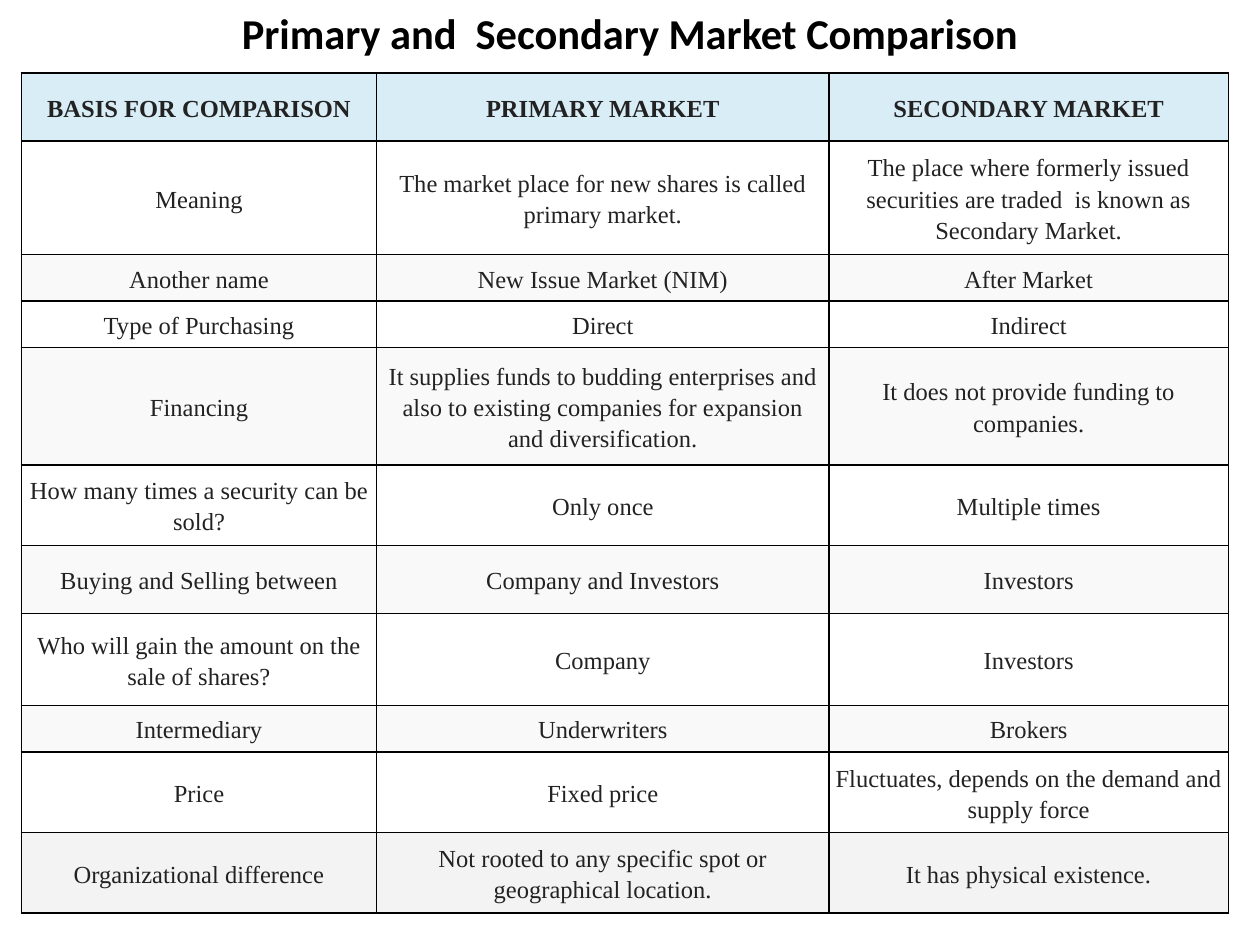
from pptx import Presentation
from pptx import util as u
from pptx.dml.color import RGBColor
from pptx.enum import text
from pptx.oxml import parse_xml
from pptx.oxml.ns import nsdecls

COLORS = {
    "title": "000000",
    "body": "222222",
    "border": "000000",
    "header": "D9EDF7",
    "plain": "FFFFFF",
    "band": "F9F9F9",
    "last": "F3F3F3",
}

COL_WIDTHS = [2.82, 3.59, 3.17]
ROW_HEIGHTS = [0.54, 0.9, 0.37, 0.37, 0.93, 0.64, 0.54, 0.73, 0.37, 0.64, 0.64]
ROWS = [
    ("BASIS FOR COMPARISON", "PRIMARY MARKET", "SECONDARY MARKET"),
    ("Meaning",
     "The market place for new shares is called primary market.",
     "The place where formerly issued securities are traded  is known as Secondary Market."),
    ("Another name", "New Issue Market (NIM)", "After Market"),
    ("Type of Purchasing", "Direct", "Indirect"),
    ("Financing",
     "It supplies funds to budding enterprises and also to existing companies "
     "for expansion and diversification.",
     "It does not provide funding to companies."),
    ("How many times a security can be sold?", "Only once", "Multiple times"),
    ("Buying and Selling between", "Company and Investors", "Investors"),
    ("Who will gain the amount on the sale of shares?", "Company", "Investors"),
    ("Intermediary", "Underwriters", "Brokers"),
    ("Price", "Fixed price", "Fluctuates, depends on the demand and supply force"),
    ("Organizational difference",
     "Not rooted to any specific spot or geographical location.",
     "It has physical existence."),
]


class Deck:
    title_font = "Calibri"
    body_font = "Times New Roman"

    def __init__(self, prs):
        self.s = prs.slides.add_slide(prs.slide_layouts[5])

    def font(self, p, name, size, color, bold):
        for r in p.runs:
            r.font.name = name
            r.font.size = u.Pt(size)
            r.font.bold = bold
            r.font.color.rgb = RGBColor.from_string(COLORS[color])

    def title(self, words, x, y, w, h):
        sp = self.s.shapes.title
        sp.left, sp.top, sp.width, sp.height = map(u.Inches, (x, y, w, h))
        tf = sp.text_frame
        tf.text = words
        tf.word_wrap = True
        tf.auto_size = text.MSO_AUTO_SIZE.NONE
        tf.vertical_anchor = text.MSO_ANCHOR.MIDDLE
        tf.margin_top, tf.margin_bottom = u.Inches(0.05), u.Inches(0.28)
        p = tf.paragraphs[0]
        p.alignment = text.PP_ALIGN.CENTER
        self.font(p, self.title_font, 24.3, "title", True)

    def borders(self, cell):
        tcPr = cell._tc.get_or_add_tcPr()
        for i, side in enumerate(("lnL", "lnR", "lnT", "lnB")):
            tcPr.insert(i, parse_xml(
                f'<a:{side} {nsdecls("a")} w="{u.Pt(1)}"><a:solidFill>'
                f'<a:srgbClr val="{COLORS["border"]}"/></a:solidFill></a:{side}>'))

    def cell(self, cell, words, fill, bold):
        cell.fill.solid()
        cell.fill.fore_color.rgb = RGBColor.from_string(COLORS[fill])
        cell.vertical_anchor = text.MSO_ANCHOR.MIDDLE
        cell.margin_left = cell.margin_right = u.Inches(0.05)
        cell.margin_top = cell.margin_bottom = u.Inches(0.05)
        p = cell.text_frame.paragraphs[0]
        p.text = words
        p.alignment = text.PP_ALIGN.CENTER
        p.line_spacing = 1.15
        p.space_after = u.Pt(12)
        self.font(p, self.body_font, 14, "body", bold)
        self.borders(cell)

    def row_fill(self, i, count):
        if i == 0:
            return "header"
        if i == count - 1:
            return "last"
        return "plain" if i % 2 else "band"

    def table(self, rows, x, y, widths, heights):
        tbl = self.s.shapes.add_table(
            len(rows), len(widths), u.Inches(x), u.Inches(y),
            u.Inches(sum(widths)), u.Inches(sum(heights))).table
        for col, w in zip(tbl.columns, widths):
            col.width = u.Inches(w)
        for i, (row, h) in enumerate(zip(rows, heights)):
            tbl.rows[i].height = u.Inches(h)
            for j, words in enumerate(row):
                self.cell(tbl.cell(i, j), words, self.row_fill(i, len(rows)), i == 0)


def main():
    prs = Presentation()
    prs.slide_width, prs.slide_height = u.Inches(10), u.Inches(7.5)
    deck = Deck(prs)
    deck.title("Primary and  Secondary Market Comparison", 0.75, 0, 8.5, 0.75)
    deck.table(ROWS, 0.17, 0.58, COL_WIDTHS, ROW_HEIGHTS)
    prs.save("out.pptx")


if __name__ == "__main__":
    main()
